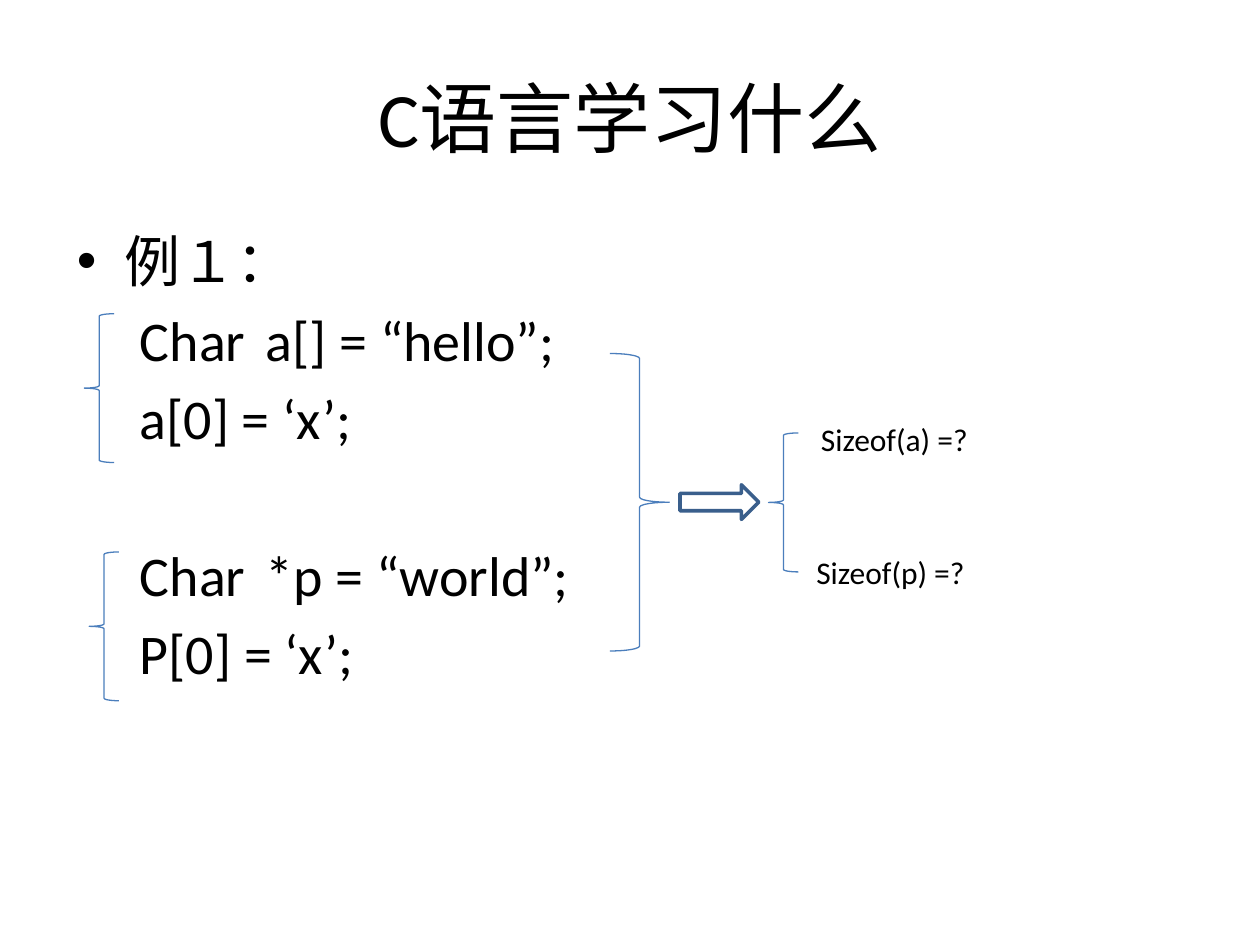
from dataclasses import dataclass

from lxml.etree import SubElement
from pptx import Presentation
from pptx.dml.color import RGBColor
from pptx.enum.shapes import MSO_SHAPE as Preset
from pptx.enum.text import MSO_ANCHOR as Anchor, MSO_AUTO_SIZE as AutoSize, PP_ALIGN as Align
from pptx.oxml.ns import qn
from pptx.util import Pt


@dataclass(frozen=True)
class Theme:
    font: str = "Calibri"
    text: RGBColor = RGBColor(0, 0, 0)
    brace: RGBColor = RGBColor(0x4B, 0x7E, 0xBC)
    arrow: RGBColor = RGBColor(0x3A, 0x5F, 0x8C)
    title_size: int = 44
    body_size: int = 32
    label_size: int = 18


THEME = Theme()
HEADING = "例１："
# Code lines with the space above them; None keeps the template's spacing
CODE_LINES = [
    ("\tChar\ta[] = “hello”;", None),
    ("\ta[0] = ‘x’;", None),
    ("\tChar\t*p = “world”;", 51),
    ("\tP[0] = ‘x’;", None),
]
CODE_TABS = (29, 104)


def place(shape, left, top, width, height):
    shape.left, shape.top = Pt(left), Pt(top)
    shape.width, shape.height = Pt(width), Pt(height)


def format_runs(paragraph, size):
    for run in paragraph.runs:
        run.font.name = THEME.font
        run.font.size = Pt(size)
        run.font.color.rgb = THEME.text


def set_code_layout(paragraph):
    """Drop the bullet and line the code up on tab stops."""
    properties = paragraph._p.get_or_add_pPr()
    properties.set("marL", "0")
    properties.set("indent", "0")
    SubElement(properties, qn("a:buNone"))
    tab_list = SubElement(properties, qn("a:tabLst"))
    for position in CODE_TABS:
        SubElement(tab_list, qn("a:tab"), pos=str(Pt(position)), algn="l")


def fill_title(slide, text):
    title = slide.shapes.title
    place(title, 36, 21.6, 648, 90)
    title.text_frame.text = text
    title.text_frame.vertical_anchor = Anchor.MIDDLE
    paragraph = title.text_frame.paragraphs[0]
    paragraph.alignment = Align.CENTER
    format_runs(paragraph, THEME.title_size)


def fill_body(slide):
    body = slide.placeholders[1]
    place(body, 36.7, 126, 648, 356.4)
    frame = body.text_frame
    frame.auto_size = AutoSize.NONE
    frame.text = HEADING
    for text, space_before in CODE_LINES:
        paragraph = frame.add_paragraph()
        paragraph.text = text
        if space_before is not None:
            paragraph.space_before = Pt(space_before)
        set_code_layout(paragraph)
    for paragraph in frame.paragraphs:
        format_runs(paragraph, THEME.body_size)


def add_outline(slide, preset, bounds, color, weight):
    shape = slide.shapes.add_shape(preset, *map(Pt, bounds))
    shape.shadow.inherit = False
    shape.fill.background()
    shape.line.color.rgb = color
    shape.line.width = Pt(weight)


def add_label(slide, text, bounds):
    frame = slide.shapes.add_textbox(*map(Pt, bounds)).text_frame
    frame.word_wrap = False
    frame.auto_size = AutoSize.SHAPE_TO_FIT_TEXT
    frame.text = text
    format_runs(frame.paragraphs[0], THEME.label_size)


def main():
    presentation = Presentation()
    presentation.slide_width, presentation.slide_height = Pt(720), Pt(540)
    slide = presentation.slides.add_slide(presentation.slide_layouts[1])

    # Title and code
    fill_title(slide, "C语言学习什么")
    fill_body(slide)

    # Braces grouping the code and the two questions
    for preset, bounds in (
        (Preset.LEFT_BRACE, (48.2, 179.3, 17, 85)),
        (Preset.LEFT_BRACE, (51, 315.4, 17, 85)),
        (Preset.RIGHT_BRACE, (348.5, 202, 34, 170)),
        (Preset.LEFT_BRACE, (439.2, 247.4, 17, 79.4)),
    ):
        add_outline(slide, preset, bounds, THEME.brace, 0.75)

    # Arrow from code to questions
    add_outline(slide, Preset.RIGHT_ARROW, (388.6, 277, 45, 19.8), THEME.arrow, 2)

    # Questions
    add_label(slide, "Sizeof(a) =?", (462, 236.4, 99.4, 29))
    add_label(slide, "Sizeof(p) =?", (459.4, 312.4, 100.8, 29))

    presentation.save("out.pptx")


if __name__ == "__main__":
    main()
